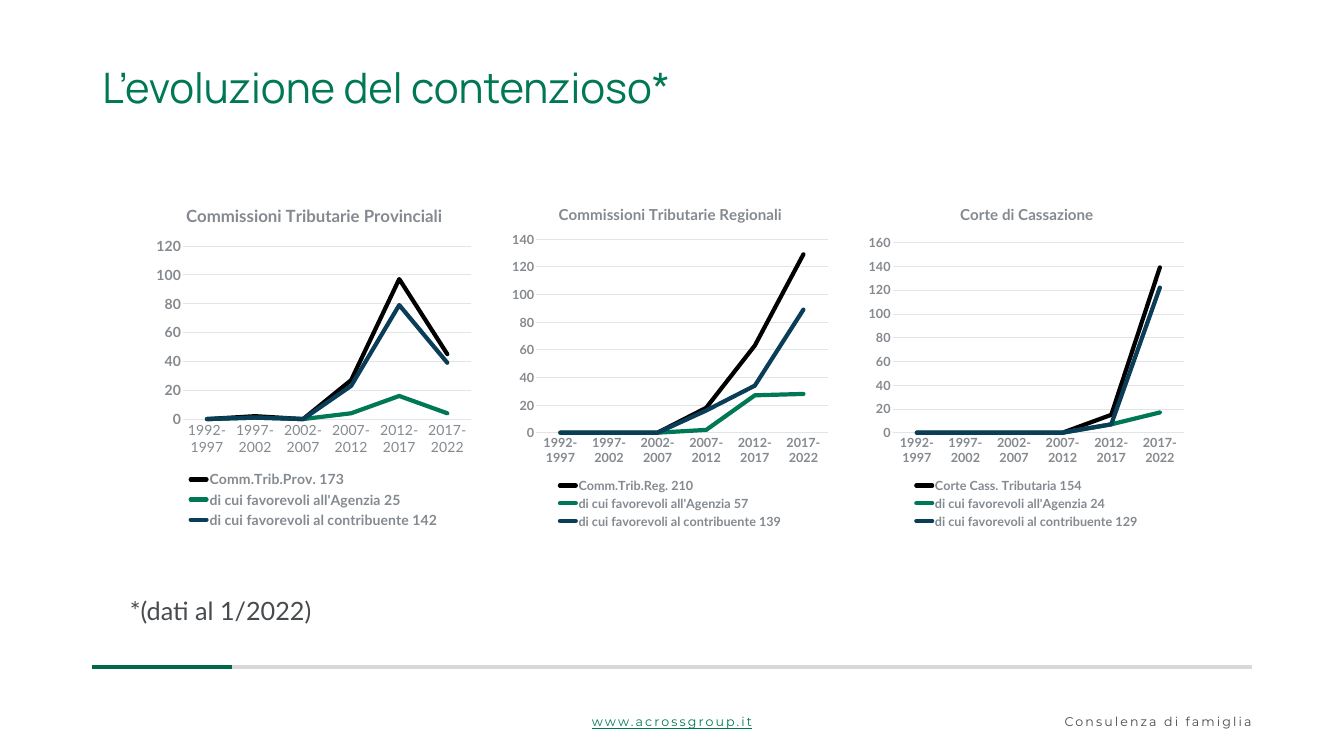
from dataclasses import dataclass

from lxml import etree
from pptx import Presentation
from pptx import util as u
from pptx.chart.chart import Chart
from pptx.chart.data import CategoryChartData
from pptx.dml.color import RGBColor
from pptx.enum import chart as ch, shapes, text
from pptx.oxml.ns import qn
from pptx.slide import Slide

SCALE = 9144  # EMU in one px, 100 px to the inch

GREEN = RGBColor(0x00, 0x78, 0x55)
DARK_GREEN = RGBColor(0x00, 0x69, 0x4A)
NAVY = RGBColor(0x0A, 0x3D, 0x57)
BLACK = RGBColor(0x00, 0x00, 0x00)
INK = RGBColor(0x47, 0x4B, 0x4E)
GREY = RGBColor(0x84, 0x8A, 0x8F)
RULE_GREY = RGBColor(0xD9, 0xD9, 0xD9)
GRID_GREY = RGBColor(0xE3, 0xE4, 0xE5)

PERIODS = ["1992-1997", "1997-2002", "2002-2007", "2007-2012", "2012-2017", "2017-2022"]
SERIES_COLORS = (BLACK, GREEN, NAVY)
CHART_LEFT, CHART_STEP, CHART_TOP = 298, 707, 380
CHART_WIDTH, CHART_HEIGHT = 650, 674


@dataclass
class Label:
    words: str
    left: int
    top: int
    width: int
    height: int
    size: int
    face: str
    color: RGBColor
    align: text.PP_ALIGN = text.PP_ALIGN.LEFT


@dataclass
class Court:
    title: str
    size: int
    title_size: float
    bold_periods: bool
    top_value: int
    plot: tuple[float, float, float, float]  # x, y, w, h as shares of the chart
    series: dict[str, tuple[int, ...]]


COURTS = [
    Court("Commissioni Tributarie Provinciali", 20, 24, False, 120, (0.1, 0.16, 0.88, 0.51), {
        "Comm.Trib.Prov. 173": (0, 2, 0, 27, 97, 45),
        "di cui favorevoli all'Agenzia 25": (0, 1, 0, 4, 16, 4),
        "di cui favorevoli al contribuente 142": (0, 1, 0, 23, 79, 39),
    }),
    Court("Commissioni Tributarie Regionali", 18, 21.6, True, 140, (0.09, 0.14, 0.89, 0.57), {
        "Comm.Trib.Reg. 210": (0, 0, 0, 18, 63, 129),
        "di cui favorevoli all'Agenzia 57": (0, 0, 0, 2, 27, 28),
        "di cui favorevoli al contribuente 139": (0, 0, 0, 16, 34, 89),
    }),
    Court("Corte di Cassazione", 18, 21.6, True, 160, (0.09, 0.15, 0.89, 0.56), {
        "Corte Cass. Tributaria 154": (0, 0, 0, 0, 15, 139),
        "di cui favorevoli all'Agenzia 24": (0, 0, 0, 0, 7, 17),
        "di cui favorevoli al contribuente 129": (0, 0, 0, 0, 7, 122),
    }),
]


def px(length: int) -> u.Emu:
    return u.Emu(length * SCALE)


def style(font, size: float, face: str, color: RGBColor, bold: bool = False) -> None:
    font.size, font.name, font.bold = u.Pt(size), face, bold
    font.color.rgb = color


def add_rule(page: Slide, start: int, end: int, color: RGBColor) -> None:
    rule = page.shapes.add_connector(
        shapes.MSO_CONNECTOR.STRAIGHT, px(start), px(1324), px(end), px(1324))
    rule.line.color.rgb = color
    rule.line.width = u.Pt(6)
    etree.SubElement(rule._element.spPr, qn("a:effectLst"))


def add_label(page: Slide, label: Label):
    box = page.shapes.add_textbox(
        px(label.left), px(label.top), px(label.width), px(label.height))
    box.text_frame.word_wrap = True
    para = box.text_frame.paragraphs[0]
    para.text, para.alignment = label.words, label.align
    style(para.font, label.size, label.face, label.color)
    return box


def add_footer(page: Slide, label: Label, underline: bool = False) -> None:
    frame = add_label(page, label).text_frame
    frame.margin_left = frame.margin_right = frame.margin_top = frame.margin_bottom = 0
    frame.vertical_anchor = text.MSO_ANCHOR.MIDDLE
    font = frame.paragraphs[0].font
    font.underline = underline
    font._rPr.set("spc", "300")


def place_plot(chart: Chart, plot: tuple[float, float, float, float]) -> None:
    area = chart._chartSpace.chart.plotArea
    for old in area.findall(qn("c:layout")):
        area.remove(old)
    layout = etree.Element(qn("c:layout"))
    manual = etree.SubElement(layout, qn("c:manualLayout"))
    settings = [("layoutTarget", "inner"), ("xMode", "edge"), ("yMode", "edge")]
    for name, value in settings + list(zip("xywh", plot)):
        etree.SubElement(manual, qn(f"c:{name}")).set("val", str(value))
    area.insert(0, layout)


def add_court_chart(page: Slide, court: Court, left: int) -> None:
    data = CategoryChartData()
    data.categories = PERIODS
    for name, values in court.series.items():
        data.add_series(name, values)
    chart = page.shapes.add_chart(
        ch.XL_CHART_TYPE.LINE, px(left), px(CHART_TOP),
        px(CHART_WIDTH), px(CHART_HEIGHT), data).chart
    style(chart.font, court.size, "Lato", INK)

    # Title and legend
    chart.has_title = True
    para = chart.chart_title.text_frame.paragraphs[0]
    para.text = court.title
    style(para.font, court.title_size, "Lato", GREY, True)
    chart.has_legend = True
    chart.legend.position = ch.XL_LEGEND_POSITION.BOTTOM
    chart.legend.include_in_layout = False
    style(chart.legend.font, court.size, "Lato", GREY, True)

    # Axes
    periods, counts = chart.category_axis, chart.value_axis
    for axis, bold in ((periods, court.bold_periods), (counts, True)):
        axis.major_tick_mark = axis.minor_tick_mark = ch.XL_TICK_MARK.NONE
        style(axis.tick_labels.font, court.size, "Lato", GREY, bold)
    counts.minimum_scale, counts.maximum_scale, counts.major_unit = 0, court.top_value, 20
    counts.format.line.fill.background()
    counts.has_major_gridlines = True
    for line in (periods.format.line, counts.major_gridlines.format.line):
        line.color.rgb, line.width = GRID_GREY, u.Pt(0.75)

    # Series
    chart.plots[0].vary_by_categories = False
    for series, color in zip(chart.plots[0].series, SERIES_COLORS):
        series.smooth = False
        series.marker.style = ch.XL_MARKER_STYLE.NONE
        series.format.line.color.rgb = color
        series.format.line.width = u.Pt(6)
    for outline in chart._chartSpace.xpath(".//c:ser/c:spPr/a:ln"):
        outline.set("cap", "rnd")
    place_plot(chart, court.plot)


def main() -> None:
    deck = Presentation()
    deck.slide_width, deck.slide_height = px(2666), px(1500)
    page = deck.slides.add_slide(deck.slide_layouts[5])

    # Title
    title = page.shapes.title
    title.left, title.top, title.width, title.height = px(183), px(80), px(2299), px(196)
    frame = title.text_frame
    frame.margin_left = frame.margin_right = px(20)
    frame.margin_top = frame.margin_bottom = px(10)
    frame.vertical_anchor = text.MSO_ANCHOR.MIDDLE
    para = frame.paragraphs[0]
    para.text = "L’evoluzione del contenzioso*"
    para.alignment, para.line_spacing = text.PP_ALIGN.LEFT, 0.9
    style(para.font, 60, "Manrope", GREEN)

    # Charts, evenly spaced
    for index, court in enumerate(COURTS):
        add_court_chart(page, court, CHART_LEFT + index * CHART_STEP)

    # Footnote
    add_label(page, Label("*(dati al 1/2022)", 248, 1176, 1333, 71, 36, "Lato", INK))

    # Footer rules and texts
    add_rule(page, 365, 2483, RULE_GREY)
    add_rule(page, 183, 460, DARK_GREEN)
    add_footer(page, Label("www.acrossgroup.it", 956, 1417, 754, 30, 18,
                           "Montserrat", GREEN, text.PP_ALIGN.CENTER), underline=True)
    add_footer(page, Label("Consulenza di famiglia", 1729, 1417, 754, 30, 18,
                           "Montserrat", INK, text.PP_ALIGN.RIGHT))

    deck.save("out.pptx")


if __name__ == "__main__":
    main()
